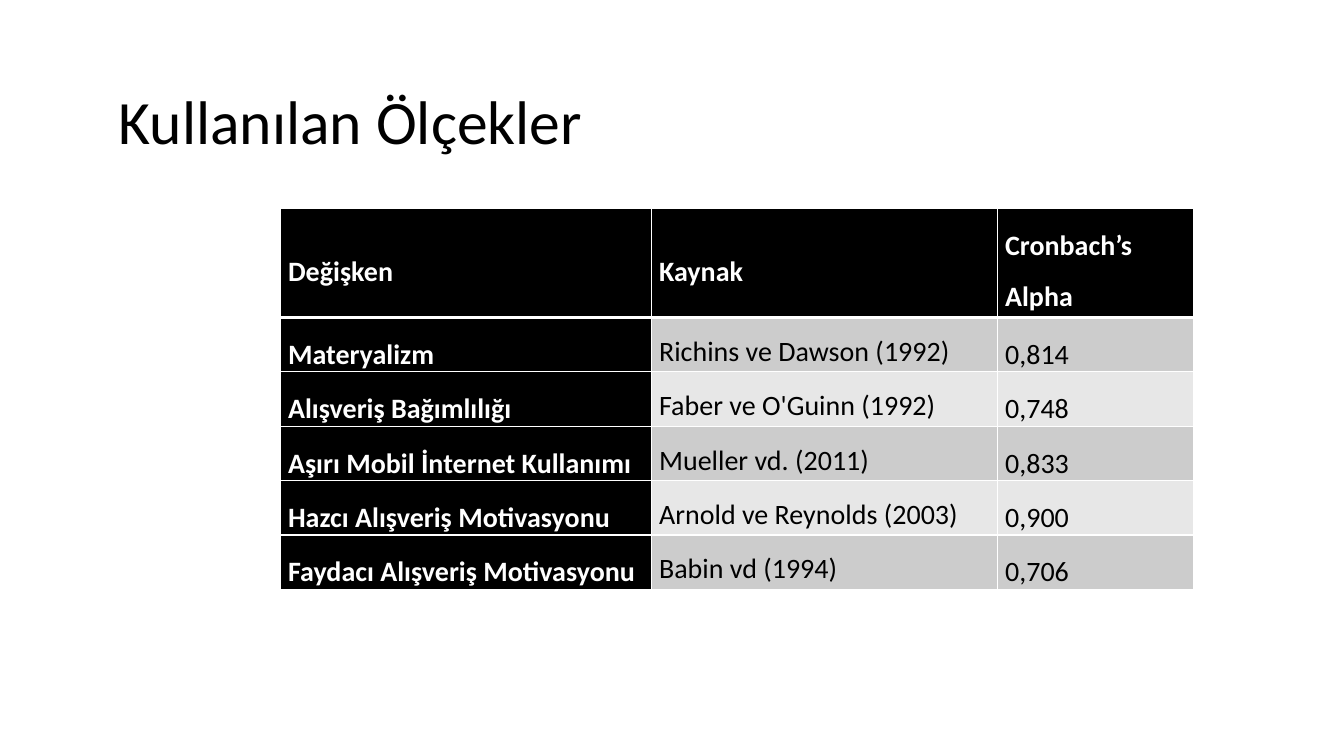
from dataclasses import dataclass

from lxml.etree import fromstring
from pptx import Presentation
from pptx.dml.color import RGBColor as RGB
from pptx.enum.text import MSO_ANCHOR as ANCHOR, PP_ALIGN as ALIGN
from pptx.oxml.ns import nsdecls
from pptx.util import Cm, Pt


@dataclass(frozen=True)
class Theme:
    font: str = "Calibri"
    title_size: int = 44
    cell_size: int = 20
    dark: str = "000000"
    light: str = "FFFFFF"
    bands: tuple = ("CCCCCC", "E7E7E7")


theme = Theme()


def set_font(p, size, color, bold=False):
    p.font.name = theme.font
    p.font.size = Pt(size)
    p.font.bold = bold
    p.font.color.rgb = RGB.from_string(color)


def set_borders(cell, widths):
    for i, (side, width) in enumerate(widths.items()):
        line = fromstring(
            f'<a:ln{side} {nsdecls("a")} w="{Pt(width)}"><a:solidFill>'
            f'<a:srgbClr val="{theme.light}"/></a:solidFill></a:ln{side}>'
        )
        cell._tc.get_or_add_tcPr().insert(i, line)


prs = Presentation()
prs.slide_width = Cm(33.87)
prs.slide_height = Cm(19.05)
slide = prs.slides.add_slide(prs.slide_layouts[5])

title = slide.shapes.title
title.left, title.top, title.width, title.height = Cm(2.74), Cm(1.3), Cm(29.21), Cm(3.68)
tf = title.text_frame
tf.text = "Kullanılan Ölçekler"
tf.vertical_anchor = ANCHOR.MIDDLE
p = tf.paragraphs[0]
p.alignment = ALIGN.LEFT
p.line_spacing = 0.9
set_font(p, theme.title_size, theme.dark)

rows = [
    ("Değişken", "Kaynak", "Cronbach’s Alpha"),
    ("Materyalizm", "Richins ve Dawson (1992)", "0,814"),
    ("Alışveriş Bağımlılığı", "Faber ve O'Guinn (1992)", "0,748"),
    ("Aşırı Mobil İnternet Kullanımı", "Mueller vd. (2011)", "0,833"),
    ("Hazcı Alışveriş Motivasyonu", "Arnold ve Reynolds (2003)", "0,900"),
    ("Faydacı Alışveriş Motivasyonu", "Babin vd (1994)", "0,706"),
]
col_widths = [Cm(9.35), Cm(8.72), Cm(4.95)]
header_height, row_height = Cm(2.74), Cm(1.37)
table_height = header_height + row_height * (len(rows) - 1)

table = slide.shapes.add_table(
    len(rows), len(col_widths), Cm(7.07), Cm(5.26), sum(col_widths), table_height
).table
table.first_col = True
for column, width in zip(table.columns, col_widths):
    column.width = width

for r, values in enumerate(rows):
    table.rows[r].height = row_height if r else header_height
    for c, value in enumerate(values):
        cell = table.cell(r, c)
        heading = r == 0 or c == 0
        cell.text = value
        cell.margin_left = cell.margin_right = Cm(0.19)
        cell.margin_top = cell.margin_bottom = 0
        if r == 0:
            cell.vertical_anchor = ANCHOR.MIDDLE
        else:
            cell.vertical_anchor = ANCHOR.TOP if c == 1 else ANCHOR.BOTTOM
        cell.fill.solid()
        fill = theme.dark if heading else theme.bands[(r - 1) % 2]
        cell.fill.fore_color.rgb = RGB.from_string(fill)
        set_borders(cell, {"L": 1, "R": 1, "T": 3 if r == 1 else 1, "B": 3 if r == 0 else 1})
        p = cell.text_frame.paragraphs[0]
        p.alignment = ALIGN.JUSTIFY
        p.line_spacing = 1.5
        set_font(p, theme.cell_size, theme.light if heading else theme.dark, heading)

prs.save("out.pptx")
